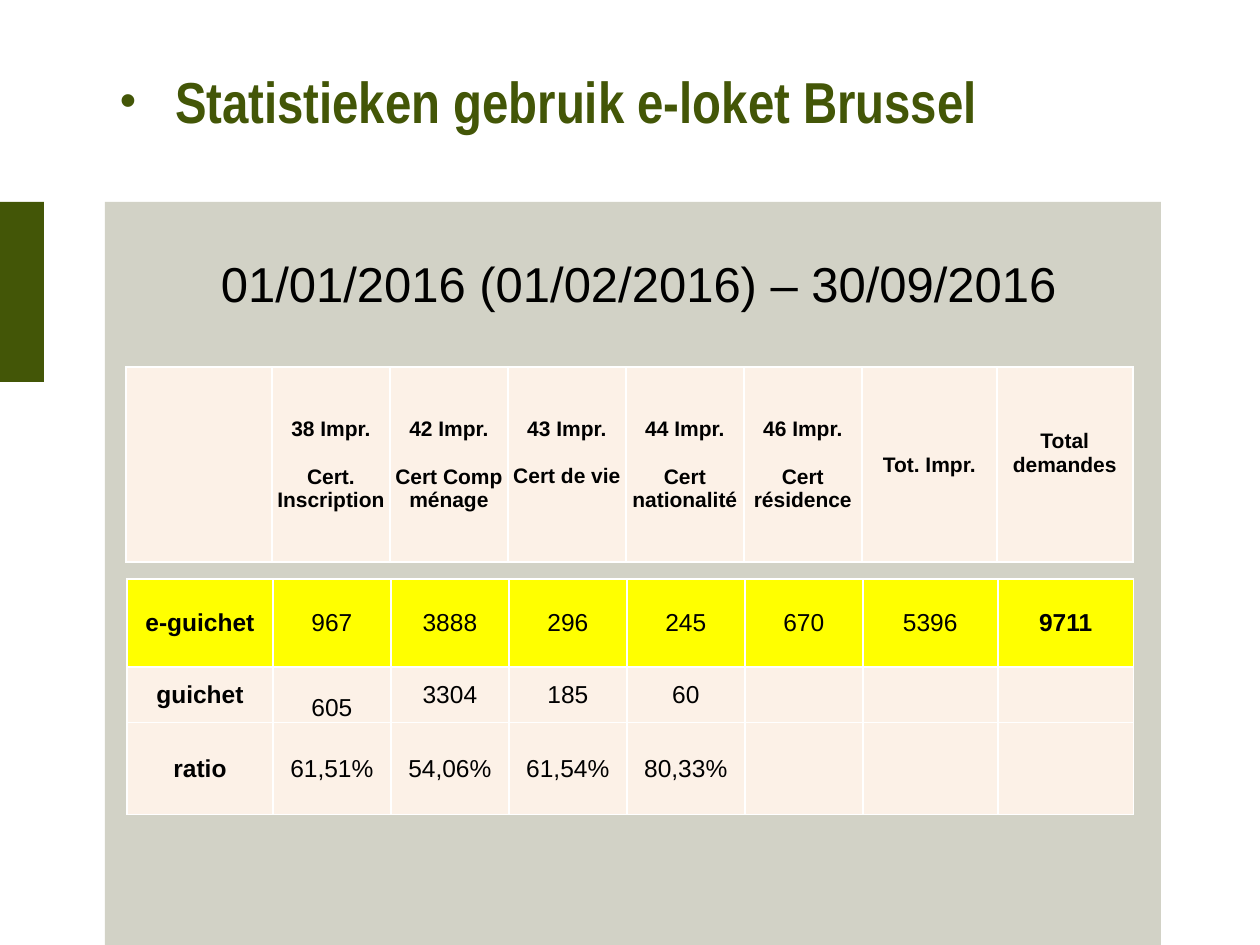
from lxml import etree
from pptx import Presentation
from pptx.dml.color import RGBColor
from pptx.enum.shapes import MSO_SHAPE
from pptx.enum.text import MSO_ANCHOR, MSO_AUTO_SIZE, PP_ALIGN
from pptx.oxml.ns import qn
from pptx.util import Emu, Pt

RECTANGLE = MSO_SHAPE.RECTANGLE
MIDDLE = MSO_ANCHOR.MIDDLE
LEFT, CENTER = PP_ALIGN.LEFT, PP_ALIGN.CENTER
NO_AUTOFIT = MSO_AUTO_SIZE.NONE
TITLE_ONLY = 5

GREEN, GREY, CREAM = "435607", "D2D2C6", "FCF1E7"
YELLOW, WHITE, BLACK = "FFFF00", "FFFFFF", "000000"
COLUMN_WIDTHS = [146] + [118] * 5 + [135, 136]


def px(length):
    return Emu(round(length * 914400 / 126))


def color(value):
    return RGBColor.from_string(value)


def write(frame, text, size, font="Arial", fill=BLACK, bold=False,
          align=CENTER, gap=0, bullet=None):
    """Write each line of text as a paragraph, with gap points between them."""
    for index, line in enumerate(text.split("\n")):
        paragraph = frame.add_paragraph() if index else frame.paragraphs[0]
        paragraph.alignment = align
        paragraph.space_before = Pt(gap if index else 0)
        if bullet:
            add_bullet(paragraph, **bullet)
        run = paragraph.add_run()
        run.text = line
        run.font.size = Pt(size)
        run.font.name = font
        run.font.bold = bold
        run.font.color.rgb = color(fill)


def add_bullet(paragraph, character, percent, indent):
    properties = paragraph._p.get_or_add_pPr()
    properties.set("marL", str(px(indent)))
    properties.set("indent", str(-px(indent)))
    for tag, name, value in (("a:buSzPct", "val", str(percent * 1000)),
                             ("a:buFont", "typeface", "Arial"),
                             ("a:buChar", "char", character)):
        etree.SubElement(properties, qn(tag)).set(name, value)


def add_borders(cell, value):
    properties = cell._tc.get_or_add_tcPr()
    for side in ("a:lnL", "a:lnR", "a:lnT", "a:lnB"):
        line = etree.SubElement(properties, qn(side), w=str(Pt(1)))
        solid = etree.SubElement(line, qn("a:solidFill"))
        etree.SubElement(solid, qn("a:srgbClr"), val=value)


class SlideBuilder:
    def __init__(self, slide):
        self.slide = slide

    def title(self, text, left, top, width, height):
        shape = self.slide.shapes.title
        shape.left, shape.top = px(left), px(top)
        shape.width, shape.height = px(width), px(height)
        frame = shape.text_frame
        frame.margin_left = frame.margin_right = 0
        frame.margin_top = frame.margin_bottom = 0
        frame.vertical_anchor = MIDDLE
        frame.auto_size = NO_AUTOFIT
        write(frame, text, 33, font="Arial Narrow", fill=GREEN, bold=True, align=LEFT,
              bullet={"character": "•", "percent": 81, "indent": 55})

    def rectangle(self, left, top, width, height, fill):
        shape = self.slide.shapes.add_shape(
            RECTANGLE, px(left), px(top), px(width), px(height))
        shape.shadow.inherit = False
        shape.fill.solid()
        shape.fill.fore_color.rgb = color(fill)
        shape.line.fill.background()

    def text(self, text, left, top, width, height, size):
        shape = self.slide.shapes.add_textbox(
            px(left), px(top), px(width), px(height))
        frame = shape.text_frame
        frame.word_wrap = True
        frame.vertical_anchor = MIDDLE
        write(frame, text, size)

    def table(self, left, top, rows, heights, fills, size, bold_columns, margins):
        """margins maps (row, column) to (top, bottom) cell margins in px."""
        table = self.slide.shapes.add_table(
            len(rows), len(COLUMN_WIDTHS), px(left), px(top),
            px(sum(COLUMN_WIDTHS)), px(sum(heights))).table
        table.first_row = table.horz_banding = False
        for column, width in zip(table.columns, COLUMN_WIDTHS):
            column.width = px(width)
        for row_index, texts in enumerate(rows):
            table.rows[row_index].height = px(heights[row_index])
            for column_index, text in enumerate(texts):
                cell = table.cell(row_index, column_index)
                add_borders(cell, WHITE)
                cell.fill.solid()
                cell.fill.fore_color.rgb = color(fills[row_index])
                cell.vertical_anchor = MIDDLE
                cell.margin_left = cell.margin_right = px(1)
                above, below = margins.get((row_index, column_index), (1, 0))
                cell.margin_top, cell.margin_bottom = px(above), px(below)
                if text:
                    write(cell.text_frame, text, size, gap=13.5,
                          bold=column_index in bold_columns)


def main():
    presentation = Presentation()
    presentation.slide_width, presentation.slide_height = px(1260), px(945)
    builder = SlideBuilder(
        presentation.slides.add_slide(presentation.slide_layouts[TITLE_ONLY]))

    # Background panel and side accent
    builder.rectangle(105, 202, 1056, 743, GREY)
    builder.rectangle(0, 202, 44, 180, GREEN)

    # Title and period
    builder.title("Statistieken gebruik e-loket Brussel", 120, 33, 1040, 135)
    builder.text("01/01/2016 (01/02/2016) – 30/09/2016", 111, 252, 1055, 62, 28)

    # Column headings
    headings = ["", "38 Impr.\nCert. Inscription", "42 Impr.\nCert Comp ménage",
                "43 Impr.\nCert de vie", "44 Impr.\nCert nationalité",
                "46 Impr.\nCert résidence", "Tot. Impr.", "Total demandes"]
    builder.table(126, 367, [headings], [195], [CREAM], 12,
                  bold_columns=range(8), margins={(0, 3): (1, 24), (0, 7): (1, 24)})

    # Figures
    figures = [
        ["e-guichet", "967", "3888", "296", "245", "670", "5396", "9711"],
        ["guichet", "605", "3304", "185", "60", "", "", ""],
        ["ratio", "61,51%", "54,06%", "61,54%", "80,33%", "", "", ""],
    ]
    builder.table(127, 579, figures, [88, 55, 92], [YELLOW, CREAM, CREAM], 14,
                  bold_columns=(0, 7), margins={(1, 1): (26, 0)})

    presentation.save("out.pptx")


if __name__ == "__main__":
    main()
